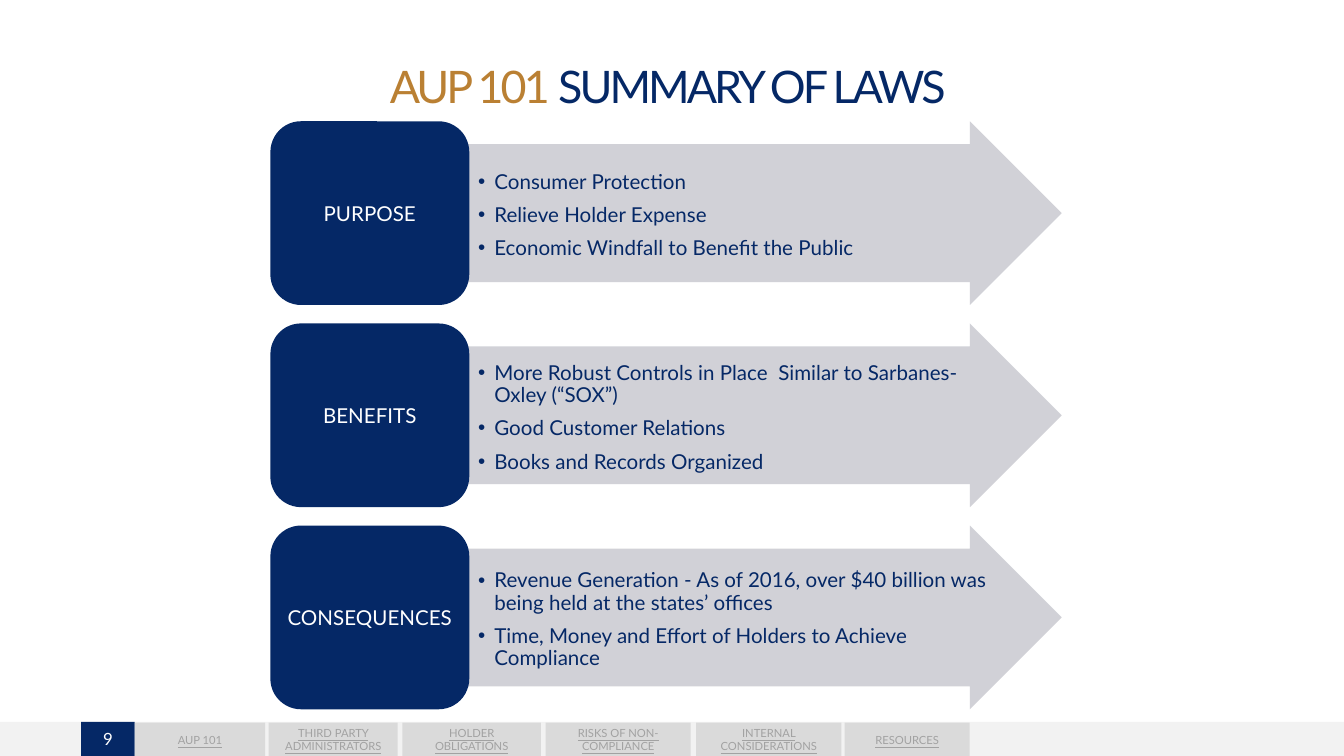
from dataclasses import dataclass

from lxml import etree
from pptx import Presentation
from pptx.dml.color import RGBColor
from pptx.enum.shapes import MSO_SHAPE
from pptx.enum.text import MSO_ANCHOR, MSO_AUTO_SIZE, PP_ALIGN
from pptx.oxml.ns import qn
from pptx.util import Emu, Inches, Pt

RECT = MSO_SHAPE.RECTANGLE
ROUND = MSO_SHAPE.ROUNDED_RECTANGLE
ARROW = MSO_SHAPE.RIGHT_ARROW
MIDDLE = MSO_ANCHOR.MIDDLE
BOTTOM = MSO_ANCHOR.BOTTOM
CENTER = PP_ALIGN.CENTER
LEFT = PP_ALIGN.LEFT
FIXED = MSO_AUTO_SIZE.NONE

WIDTH = Inches(10)
HEIGHT = Emu(WIDTH * 9 // 16)
FONT = "Lato"
NAVY, GOLD, WHITE = "052866", "BA8033", "FFFFFF"
PALE, TILE, GREY, SILVER = "F2F2F2", "DADADA", "A2A2A2", "CCCDD3"

ROW_TOP, ROW_STEP, ROW_HIGH = 16.05, 26.74, 24.3
BAR_TOP, BAR_HIGH = 95.5, 4.5


@dataclass
class Box:
    left: float
    top: float
    width: float
    height: float

    def place(self) -> tuple:
        across = [Emu(round(WIDTH * n / 100)) for n in (self.left, self.width)]
        down = [Emu(round(HEIGHT * n / 100)) for n in (self.top, self.height)]
        return across[0], down[0], across[1], down[1]


@dataclass
class Tab:
    label: str
    left: float
    width: float


@dataclass
class Topic:
    label: str
    points: list[str]


TABS = [
    Tab("AUP 101", 10.03, 9.7),
    Tab("THIRD PARTY ADMINISTRATORS", 20, 9.6),
    Tab("HOLDER OBLIGATIONS", 29.95, 10.3),
    Tab("RISKS OF NON-COMPLIANCE", 40.6, 10.8),
    Tab("INTERNAL CONSIDERATIONS", 51.8, 10.8),
    Tab("RESOURCES", 62.85, 9.3),
]

TOPICS = [
    Topic("PURPOSE", [
        "Consumer Protection",
        "Relieve Holder Expense",
        "Economic Windfall to Benefit the Public",
    ]),
    Topic("BENEFITS", [
        "More Robust Controls in Place  Similar to Sarbanes-Oxley (“SOX”)",
        "Good Customer Relations",
        "Books and Records Organized",
    ]),
    Topic("CONSEQUENCES", [
        "Revenue Generation - As of 2016, over $40 billion was being held at the states’ offices",
        "Time, Money and Effort of Holders to Achieve Compliance",
    ]),
]


def color(code: str) -> RGBColor:
    return RGBColor.from_string(code)


def add_run(para, text: str, size: float, code: str, line: bool = False):
    run = para.add_run()
    run.text = text
    font = run.font
    font.name, font.size = FONT, Pt(size)
    font.color.rgb = color(code)
    if line:
        font.underline = True
    return run


def set_frame(shape, anchor, pads: tuple, wrap: bool = True):
    frame = shape.text_frame
    frame.word_wrap = wrap
    frame.auto_size = FIXED
    frame.vertical_anchor = anchor
    (frame.margin_left, frame.margin_top,
     frame.margin_right, frame.margin_bottom) = [Inches(n) for n in pads]
    return frame


def add_block(slide, kind, box: Box, code: str):
    shape = slide.shapes.add_shape(kind, *box.place())
    shape.shadow.inherit = False
    shape.fill.solid()
    shape.fill.fore_color.rgb = color(code)
    shape.line.fill.background()
    return shape


def add_label(shape, text: str, size: float, code: str, pad: float,
              line: bool = False, wrap: bool = True) -> None:
    para = set_frame(shape, MIDDLE, (pad, 0, pad, 0), wrap).paragraphs[0]
    para.alignment = CENTER
    add_run(para, text, size, code, line)


def add_bullet(para) -> None:
    props = para._p.get_or_add_pPr()
    props.set("marL", str(Inches(0.12)))
    props.set("indent", str(-Inches(0.12)))
    etree.SubElement(props, qn("a:buFont")).set("typeface", "Arial")
    etree.SubElement(props, qn("a:buChar")).set("char", "•")


def add_title(slide) -> None:
    title = slide.shapes.title
    title.left, title.top, title.width, title.height = Box(6.1, 0.75, 87.8, 14.1).place()
    para = set_frame(title, BOTTOM, (0, 0.05, 0, 0)).paragraphs[0]
    para.alignment = CENTER
    para.line_spacing = 0.85
    for text, code in (("AUP 101 ", GOLD), ("SUMMARY OF LAWS ", NAVY)):
        run = add_run(para, text, 24, code)
        run._r.get_or_add_rPr().set("spc", "-160")


def add_footer(slide) -> None:
    add_block(slide, RECT, Box(0, BAR_TOP, 100, BAR_HIGH), PALE)
    page = add_block(slide, RECT, Box(6.03, BAR_TOP, 4, BAR_HIGH), NAVY)
    add_label(page, "9", 9, WHITE, 0, wrap=False)
    for tab in TABS:
        tile = add_block(slide, RECT, Box(tab.left, BAR_TOP + 0.1, tab.width, BAR_HIGH), TILE)
        add_label(tile, tab.label, 6, GREY, 0.1, line=True)


def add_topic(slide, topic: Topic, row: int) -> None:
    top = ROW_TOP + row * ROW_STEP
    arrow = add_block(slide, ARROW, Box(34.6, top, 44.4, ROW_HIGH), SILVER)
    arrow.adjustments[0], arrow.adjustments[1] = 0.75, 0.5
    tint = arrow.fill._xPr.find(".//" + qn("a:srgbClr"))
    etree.SubElement(tint, qn("a:alpha")).set("val", "90000")
    frame = set_frame(arrow, MIDDLE, (0.1, 0.05, 0.01, 0.01))
    for spot, point in enumerate(topic.points):
        para = frame.add_paragraph() if spot else frame.paragraphs[0]
        add_bullet(para)
        para.alignment = LEFT
        para.line_spacing = 0.9
        para.space_after = Pt(6)
        add_run(para, point, 11, NAVY)
    card = add_block(slide, ROUND, Box(20.12, top, 14.8, ROW_HIGH), NAVY)
    add_label(card, topic.label, 11, WHITE, 0.05)


def main() -> None:
    deck = Presentation()
    deck.slide_width, deck.slide_height = WIDTH, HEIGHT
    slide = deck.slides.add_slide(deck.slide_layouts[5])
    add_footer(slide)
    add_title(slide)
    for row, topic in enumerate(TOPICS):
        add_topic(slide, topic, row)
    deck.save("out.pptx")


if __name__ == "__main__":
    main()
